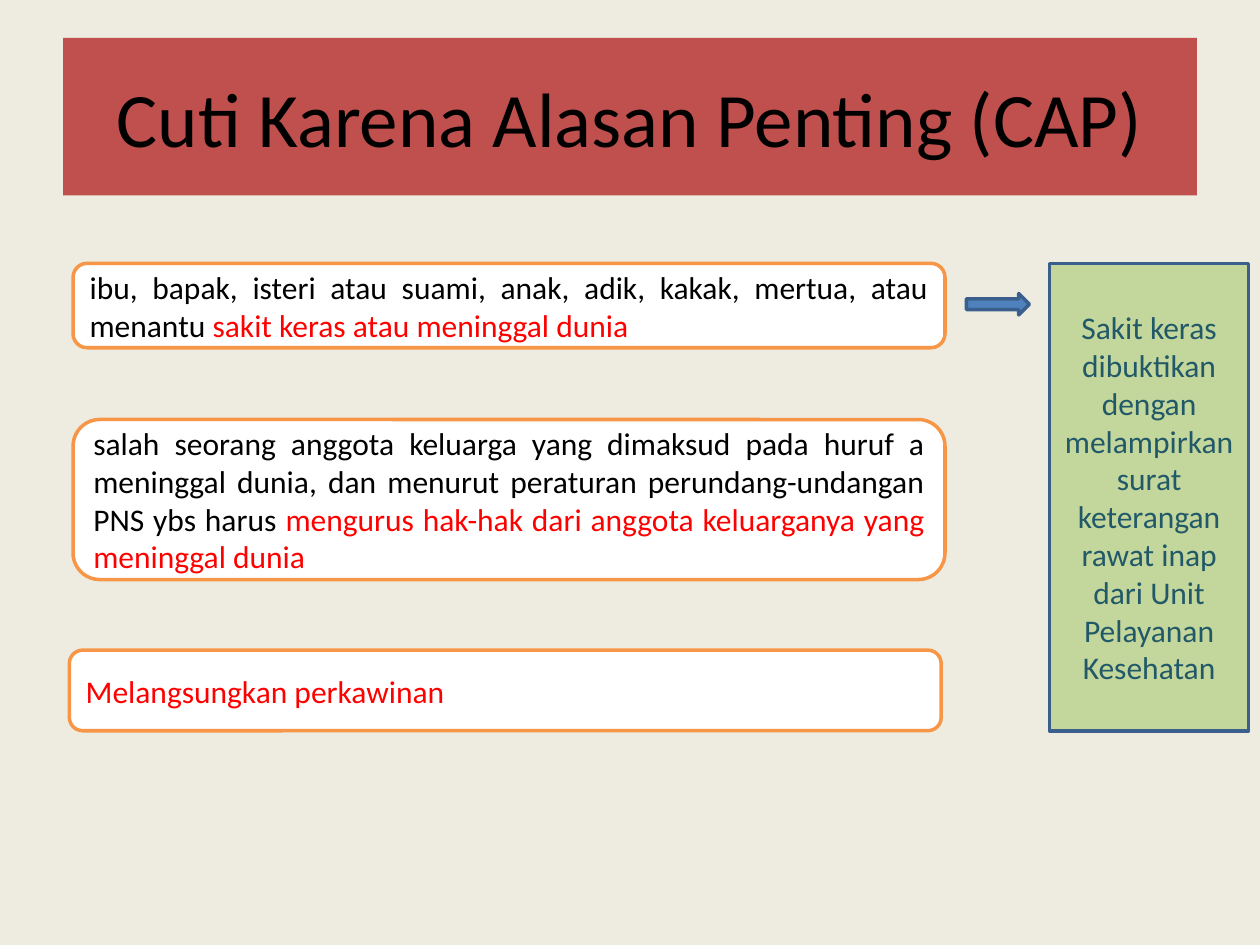
from dataclasses import dataclass

from pptx import Presentation
from pptx.dml.color import RGBColor
from pptx.enum.shapes import MSO_SHAPE as Shape
from pptx.enum.text import MSO_ANCHOR as Anchor, PP_ALIGN as Align
from pptx.util import Inches, Pt


@dataclass(frozen=True)
class Theme:
    font: str = "Calibri"
    title_size: int = 44
    body_size: int = 18
    line_width: int = 2
    background: str = "EEECE1"
    banner: str = "C0504D"
    text: str = "000000"
    accent: str = "FF0000"
    card: str = "FFFFFF"
    card_line: str = "F79646"
    note: str = "C3D69B"
    note_text: str = "215968"
    arrow: str = "4F81BD"
    blue_line: str = "3A5F8C"


theme = Theme()


def write(box, *pieces, size=theme.body_size, align=Align.JUSTIFY):
    """Fill a box with one paragraph of (text, colour) pieces."""
    frame = box.text_frame
    frame.word_wrap = True
    frame.vertical_anchor = Anchor.MIDDLE
    para = frame.paragraphs[0]
    para.alignment = align
    for text, color in pieces:
        span = para.add_run()
        span.text = text
        span.font.name = theme.font
        span.font.size = Pt(size)
        span.font.color.rgb = RGBColor.from_string(color)


def add_box(page, kind, left, top, width, height, fill, line):
    """Add a filled and outlined shape, measured in inches."""
    box = page.shapes.add_shape(
        kind, Inches(left), Inches(top), Inches(width), Inches(height))
    box.shadow.inherit = False
    box.fill.solid()
    box.fill.fore_color.rgb = RGBColor.from_string(fill)
    box.line.color.rgb = RGBColor.from_string(line)
    box.line.width = Pt(theme.line_width)
    return box


deck = Presentation()
deck.slide_width, deck.slide_height = Inches(10), Inches(7.5)
page = deck.slides.add_slide(deck.slide_layouts[5])
page.background.fill.solid()
page.background.fill.fore_color.rgb = RGBColor.from_string(theme.background)

# Title banner: margins of 5% of the width and 4% of the height
title = page.shapes.title
title.left, title.top = int(deck.slide_width * 0.05), int(deck.slide_height * 0.04)
title.width, title.height = int(deck.slide_width * 0.9), int(deck.slide_height / 6)
title.fill.solid()
title.fill.fore_color.rgb = RGBColor.from_string(theme.banner)
write(title, ("Cuti Karena Alasan Penting (CAP)", theme.text),
      size=theme.title_size, align=Align.CENTER)

# Reasons for leave, stacked in the left column
content_top, content_bottom = 2.09, 5.8
card_width = 6.92
reasons = [
    (0.58, content_top, 0.67, [
        ("ibu, bapak, isteri atau suami, anak, adik, kakak, mertua, "
         "atau menantu ", theme.text),
        ("sakit keras atau meninggal dunia", theme.accent)]),
    (0.58, 3.33, 1.27, [
        ("salah seorang anggota keluarga yang dimaksud pada huruf a "
         "meninggal dunia, dan menurut peraturan perundang-undangan "
         "PNS ybs harus ", theme.text),
        ("mengurus hak-hak dari anggota keluarganya yang meninggal dunia",
         theme.accent)]),
    (0.55, 5.16, content_bottom - 5.16, [
        ("Melangsungkan perkawinan", theme.accent)]),
]
for left, top, height, pieces in reasons:
    card = add_box(page, Shape.ROUNDED_RECTANGLE, left, top, card_width, height,
                   theme.card, theme.card_line)
    write(card, *pieces)

# Required evidence, as tall as the stack of reasons
note = add_box(page, Shape.RECTANGLE, 8.33, content_top, 1.58,
               content_bottom - content_top, theme.note, theme.blue_line)
write(note, ("Sakit keras dibuktikan dengan melampirkansurat keterangan "
             "rawat inap dari Unit Pelayanan Kesehatan", theme.note_text),
      align=Align.CENTER)

# Arrow from the first reason to the evidence
add_box(page, Shape.RIGHT_ARROW, 7.67, 2.33, 0.5, 0.17,
        theme.arrow, theme.blue_line)

deck.save("out.pptx")
